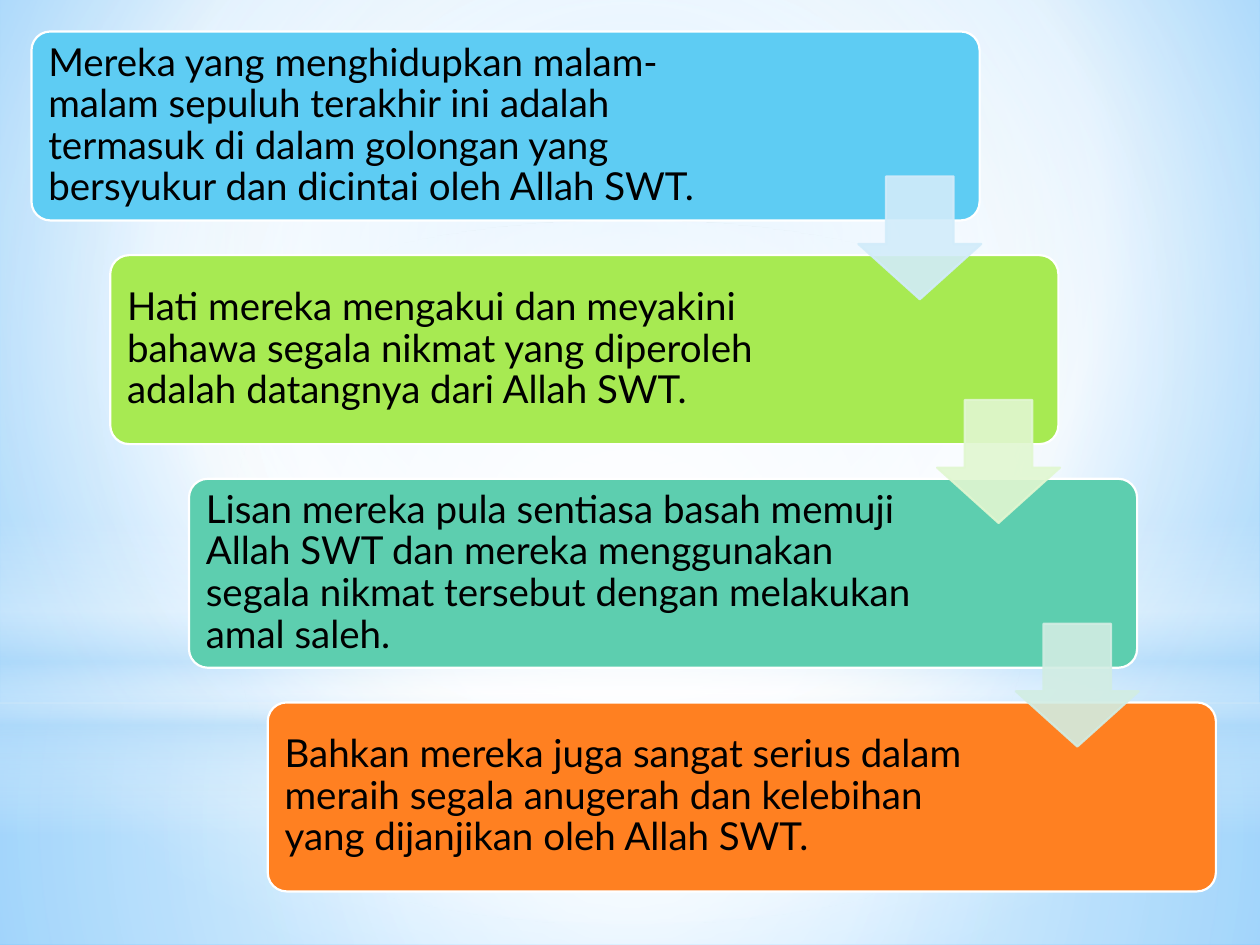
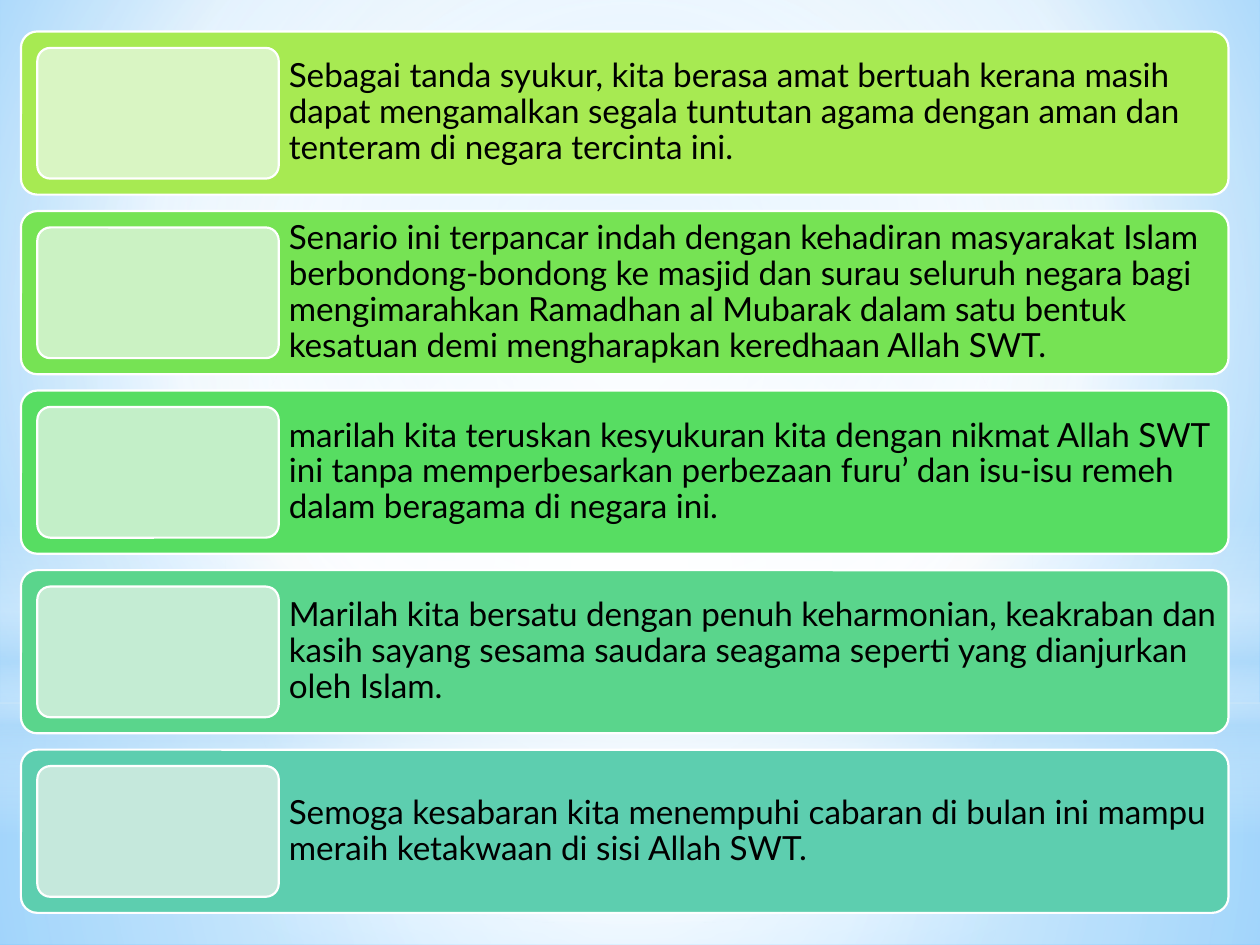
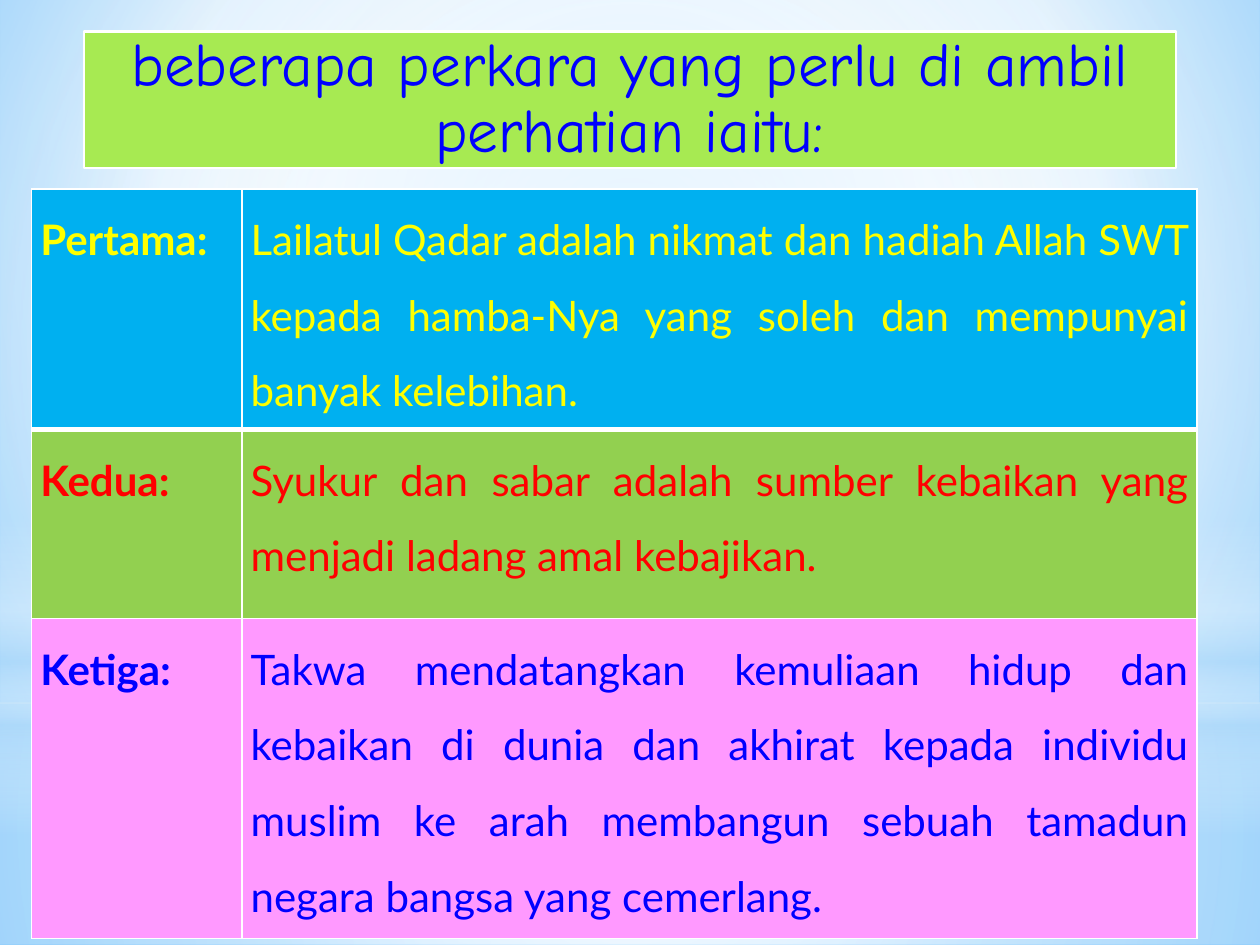
from lxml import etree
from pptx import Presentation
from pptx.dml.color import RGBColor
from pptx.enum.shapes import MSO_SHAPE as SHAPE
from pptx.enum.text import MSO_ANCHOR as ANCHOR, MSO_AUTO_SIZE as AUTOSIZE, PP_ALIGN as ALIGN
from pptx.oxml import parse_xml
from pptx.oxml.ns import qn
from pptx.util import Inches, Pt

# Colours
BLACK = RGBColor(0x00, 0x00, 0x00)
WHITE = RGBColor(0xFF, 0xFF, 0xFF)
YELLOW = RGBColor(0xFF, 0xFF, 0x00)
RED = RGBColor(0xFF, 0x00, 0x00)
BLUE = RGBColor(0x00, 0x00, 0xFF)
SKY = RGBColor(0x5E, 0xCC, 0xF3)
LIME = RGBColor(0xA7, 0xEA, 0x52)
LEAF = RGBColor(0x76, 0xE3, 0x54)
GREEN = RGBColor(0x57, 0xDD, 0x62)
MINT = RGBColor(0x5A, 0xD5, 0x8C)
TEAL = RGBColor(0x5D, 0xCE, 0xAF)
ORANGE = RGBColor(0xFF, 0x80, 0x21)
PALE_SKY = RGBColor(0xD2, 0xEC, 0xFA)
PALE_LIME = RGBColor(0xE1, 0xF7, 0xD1)
PALE_TEAL = RGBColor(0xD2, 0xED, 0xE3)
TILE_LIME = RGBColor(0xD9, 0xF5, 0xC3)
TILE_LEAF = RGBColor(0xCB, 0xF2, 0xC3)
TILE_GREEN = RGBColor(0xC3, 0xEF, 0xC8)
TILE_MINT = RGBColor(0xC4, 0xEC, 0xD3)
TILE_TEAL = RGBColor(0xC5, 0xE8, 0xDC)
ROW_BLUE = RGBColor(0x00, 0xB0, 0xF0)
ROW_GREEN = RGBColor(0x92, 0xD0, 0x50)
ROW_PINK = RGBColor(0xFF, 0x99, 0xFF)
HAZE = RGBColor(0xB4, 0xDC, 0xFA)
BG_LIGHT = RGBColor(0x9E, 0xD5, 0xFF)
BG_DEEP = RGBColor(0x5B, 0xB9, 0xFF)

BODY_FONT, TITLE_FONT = "Lato", "Comic Neue"
COLS = 80  # the grid has 80 columns and 60 rows of square cells
A_NS = "http://schemas.openxmlformats.org/drawingml/2006/main"
CENTRE = (50, 50, 50, 50)


def gradient(stops, focus=None, angle=0):
    """Gradient fill from (position, colour, opacity) stops in percent."""
    fill = parse_xml(f'<a:gradFill xmlns:a="{A_NS}" rotWithShape="1"><a:gsLst/></a:gradFill>')
    for pos, color, opacity in stops:
        gs = etree.SubElement(fill[0], qn("a:gs"), pos=str(pos * 1000))
        clr = etree.SubElement(gs, qn("a:srgbClr"), val=str(color))
        etree.SubElement(clr, qn("a:alpha"), val=str(opacity * 1000))
    if focus:
        way = etree.SubElement(fill, qn("a:path"), path="circle")
        sides = {k: str(v * 1000) for k, v in zip("ltrb", focus)}
        etree.SubElement(way, qn("a:fillToRect"), **sides)
    else:
        etree.SubElement(fill, qn("a:lin"), ang=str(angle * 60000), scaled="0")
    return fill


def write(tf, text, size=22, font=BODY_FONT, color=BLACK, bold=False,
          align=ALIGN.LEFT, spacing=0.9):
    p = tf.paragraphs[0]
    p.alignment, p.line_spacing = align, spacing
    r = p.add_run()
    r.text = text
    r.font.name, r.font.size, r.font.bold = font, Pt(size), bold
    r.font.color.rgb = color


class Deck:
    def __init__(self):
        self.prs = Presentation()
        self.prs.slide_width, self.prs.slide_height = Inches(10), Inches(7.5)
        self.cell = self.prs.slide_width / COLS
        self.s = None

    def units(self, *lengths):
        return [round(n * self.cell) for n in lengths]

    def slide(self, layout=6):
        self.s = self.prs.slides.add_slide(self.prs.slide_layouts[layout])

    def style(self, sp, fill, line=WHITE):
        sp.fill.solid()
        sp.fill.fore_color.rgb = fill
        sp.line.color.rgb = line
        sp.line.width = Pt(1.25)

    def shape(self, kind, box, fill, line=WHITE, adj=(), opacity=100):
        sp = self.s.shapes.add_shape(kind, *self.units(*box))
        sp.shadow.inherit = False
        self.style(sp, fill, line)
        for i, value in enumerate(adj):
            sp.adjustments[i] = value
        if opacity < 100:
            for clr in sp.element.spPr.iter(qn("a:srgbClr")):
                etree.SubElement(clr, qn("a:alpha"), val=str(opacity * 1000))
        return sp

    def card(self, box, fill):
        return self.shape(SHAPE.ROUNDED_RECTANGLE, box, fill, adj=[0.1])

    def frame(self, tf, inset):
        tf.word_wrap, tf.auto_size = True, AUTOSIZE.NONE
        tf.vertical_anchor = ANCHOR.MIDDLE
        tf.margin_left = tf.margin_right = tf.margin_top = tf.margin_bottom = Inches(inset)

    def text(self, box, text, inset, **fmt):
        tf = self.s.shapes.add_textbox(*self.units(*box)).text_frame
        self.frame(tf, inset)
        write(tf, text, **fmt)

    def title(self, box, text, fill, **fmt):
        sp = self.s.shapes.title
        sp.left, sp.top, sp.width, sp.height = self.units(*box)
        self.style(sp, fill)
        self.frame(sp.text_frame, 0.27)
        write(sp.text_frame, text, font=TITLE_FONT, align=ALIGN.CENTER, **fmt)

    def backdrop(self, layers, stops, focus):
        """Put the background and its light layers on the master."""
        master = self.prs.slide_master
        master.background.fill.solid()
        bg = master.element.find(".//" + qn("p:bgPr"))
        bg.replace(bg[0], gradient(stops, focus))
        for i, (kind, box, fill) in enumerate(layers):
            sp = self.shape(kind, box, WHITE)
            sp.line.fill.background()
            pr = sp.element.spPr
            pr.replace(pr.find(qn("a:solidFill")), fill)
            sp.element.nvSpPr.cNvPr.set("id", str(100 + i))
            master.shapes.element.insert(2 + i, sp.element)

    def borders(self, cell_pr, **widths):
        for i, side in enumerate("LRTB"):
            cell_pr.insert(i, parse_xml(
                f'<a:ln{side} xmlns:a="{A_NS}" w="{Pt(widths.get(side, 1))}"><a:solidFill>'
                f'<a:srgbClr val="{WHITE}"/></a:solidFill></a:ln{side}>'))

    def table(self, box, widths, heights, rows):
        frame = self.s.shapes.add_table(len(rows), len(widths), *self.units(*box))
        table = frame.table
        table.first_row = table.horz_banding = False
        for col, width in zip(table.columns, self.units(*widths)):
            col.width = width
        for row, height in zip(table.rows, self.units(*heights)):
            row.height = height
        for i, (*texts, fill, color) in enumerate(rows):
            for j, text in enumerate(texts):
                cell = table.cell(i, j)
                cell.fill.solid()
                cell.fill.fore_color.rgb = fill
                cell.margin_left = cell.margin_right = Inches(0.07)
                cell.margin_top = cell.margin_bottom = 0
                write(cell.text_frame, text, size=24, color=color, bold=j == 0,
                      align=ALIGN.JUSTIFY, spacing=1.5)
        # A thicker rule below the first row
        rules = [{"B": 3}, {"T": 3}]
        for n, cell_pr in enumerate(frame.element.iter(qn("a:tcPr"))):
            i = n // len(widths)
            self.borders(cell_pr, **(rules[i] if i < len(rules) else {}))


STEPS = [
    ("Mereka yang menghidupkan malam-malam sepuluh terakhir ini adalah termasuk di dalam "
     "golongan yang bersyukur dan dicintai oleh Allah SWT.", SKY, 46.2),
    ("Hati mereka mengakui dan meyakini bahawa segala nikmat yang diperoleh adalah "
     "datangnya dari Allah SWT.", LIME, 46.75),
    ("Lisan mereka pula sentiasa basah memuji Allah SWT dan mereka menggunakan segala "
     "nikmat tersebut dengan melakukan amal saleh.", TEAL, 46.75),
    ("Bahkan mereka juga sangat serius dalam meraih segala anugerah dan kelebihan yang "
     "dijanjikan oleh Allah SWT.", ORANGE, 46.75),
]
ARROWS = [PALE_SKY, PALE_LIME, PALE_TEAL]

MESSAGES = [
    ("Sebagai tanda syukur, kita berasa amat bertuah kerana masih dapat mengamalkan segala "
     "tuntutan agama dengan aman dan tenteram di negara tercinta ini.", LIME, TILE_LIME),
    ("Senario ini terpancar indah dengan kehadiran masyarakat Islam berbondong-bondong ke "
     "masjid dan surau seluruh negara bagi mengimarahkan Ramadhan al Mubarak dalam satu "
     "bentuk kesatuan demi mengharapkan keredhaan Allah SWT.", LEAF, TILE_LEAF),
    ("marilah kita teruskan kesyukuran kita dengan nikmat Allah SWT ini tanpa "
     "memperbesarkan perbezaan furu’ dan isu-isu remeh dalam beragama di negara ini.",
     GREEN, TILE_GREEN),
    ("Marilah kita bersatu dengan penuh keharmonian, keakraban dan kasih sayang sesama "
     "saudara seagama seperti yang dianjurkan oleh Islam.", MINT, TILE_MINT),
    ("Semoga kesabaran kita menempuhi cabaran di bulan ini mampu meraih ketakwaan di sisi "
     "Allah SWT.", TEAL, TILE_TEAL),
]

POINTS = [
    ("Pertama:", "Lailatul Qadar adalah nikmat dan hadiah Allah SWT kepada hamba-Nya yang "
     "soleh dan mempunyai banyak kelebihan.", ROW_BLUE, YELLOW),
    ("Kedua:", "Syukur dan sabar adalah sumber kebaikan yang menjadi ladang amal kebajikan.",
     ROW_GREEN, RED),
    ("Ketiga:", "Takwa mendatangkan kemuliaan hidup dan kebaikan di dunia dan akhirat kepada "
     "individu muslim ke arah membangun sebuah tamadun negara bangsa yang cemerlang.",
     ROW_PINK, BLUE),
]


def main():
    deck = Deck()

    # Slide 1: staircase of cards, with the shared backdrop
    deck.slide()
    deck.backdrop([
        (SHAPE.RECTANGLE, (0, 44.64, 80, 15.36),
         gradient([(0, WHITE, 91), (37, WHITE, 76), (100, HAZE, 79)], CENTRE)),
        (SHAPE.RECTANGLE, (0, 0, 80, 44.64),
         gradient([(0, WHITE, 89), (48, WHITE, 62), (100, HAZE, 79)], CENTRE)),
        (SHAPE.RECTANGLE, (0, 33, 80, 20),
         gradient([(0, WHITE, 0), (29, WHITE, 30), (45, HAZE, 40), (55, WHITE, 26),
                   (65, HAZE, 60), (100, WHITE, 0)], angle=90)),
        (SHAPE.OVAL, (0, 14, 80, 44.64),
         gradient([(0, WHITE, 100), (56, WHITE, 0)], CENTRE)),
    ], [(0, BG_LIGHT, 100), (60, WHITE, 100), (100, BG_DEEP, 100)], (20, 10, 20, 60))
    for i, (text, fill, width) in enumerate(STEPS):
        left, top = 2 + 5 * i, 2 + 14.2 * i
        deck.card((left, top, 60.2, 12), fill)
        deck.text((left + 0.35, top + 0.35, width, 11.3), text, inset=0.09)
    for i, color in enumerate(ARROWS):
        deck.shape(SHAPE.DOWN_ARROW, (54.5 + 5 * i, 11.2 + 14.2 * i, 7.8, 7.8), color,
                   line=color, adj=[0.55, 0.45], opacity=90)

    # Slide 2: stacked messages with a tile on the left
    deck.slide()
    for i, (text, fill, tile) in enumerate(MESSAGES):
        top = 2 + 11.4 * i
        deck.card((1.33, top, 76.67, 10.36), fill)
        deck.text((17.7, top, 60.33, 10.36), text, inset=0.08, size=19)
        deck.card((2.37, top + 1.04, 15.33, 8.3), tile)

    # Slide 3: title and table of points
    deck.slide(layout=5)
    deck.title((5.33, 2, 69.33, 8.67), "beberapa perkara yang perlu di ambil perhatian iaitu:",
               LIME, size=35, color=BLUE)
    deck.table((2, 12, 74, 47.6), [13.36, 60.64], [15.28, 12, 20.32], POINTS)

    deck.prs.save("out.pptx")


if __name__ == "__main__":
    main()
